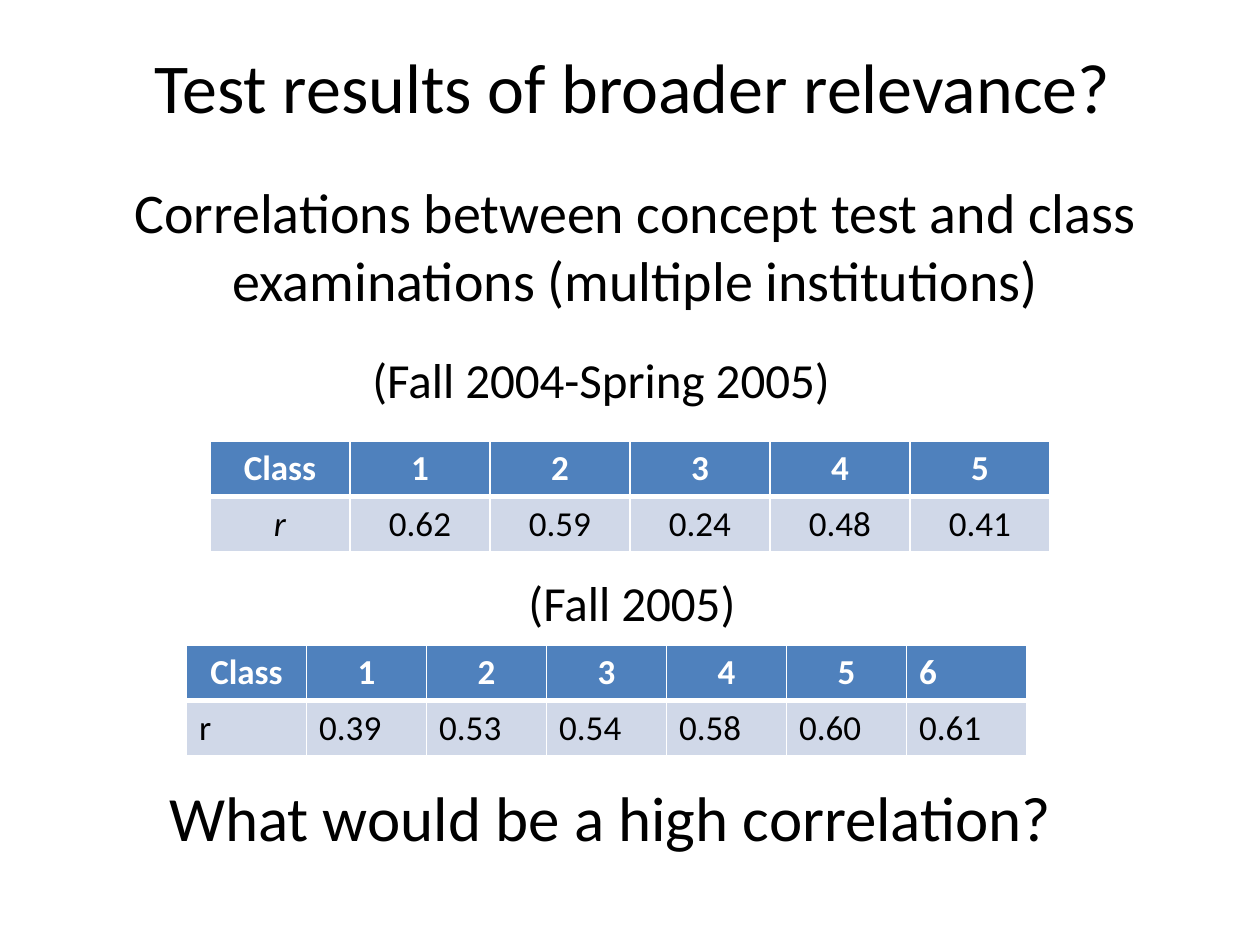
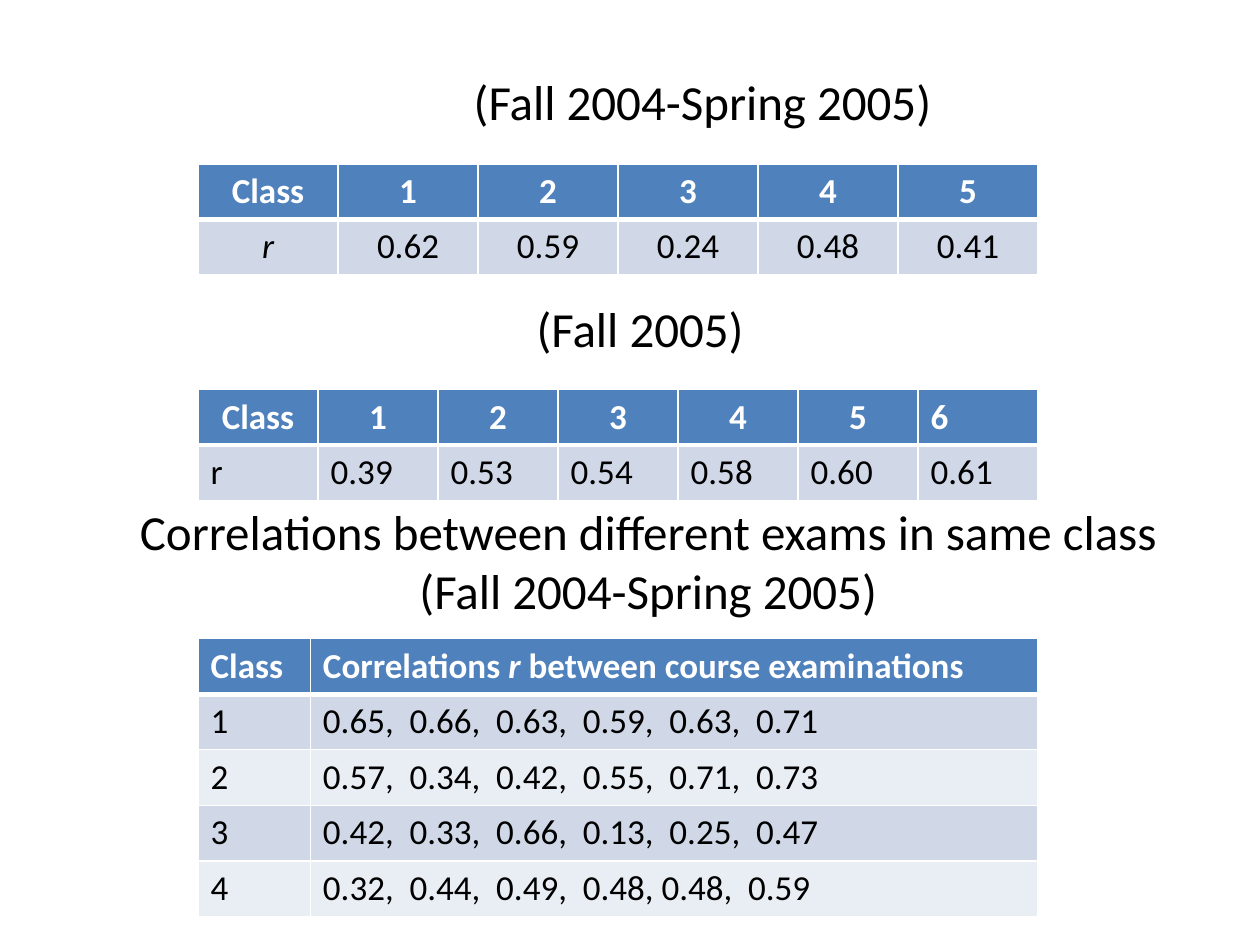
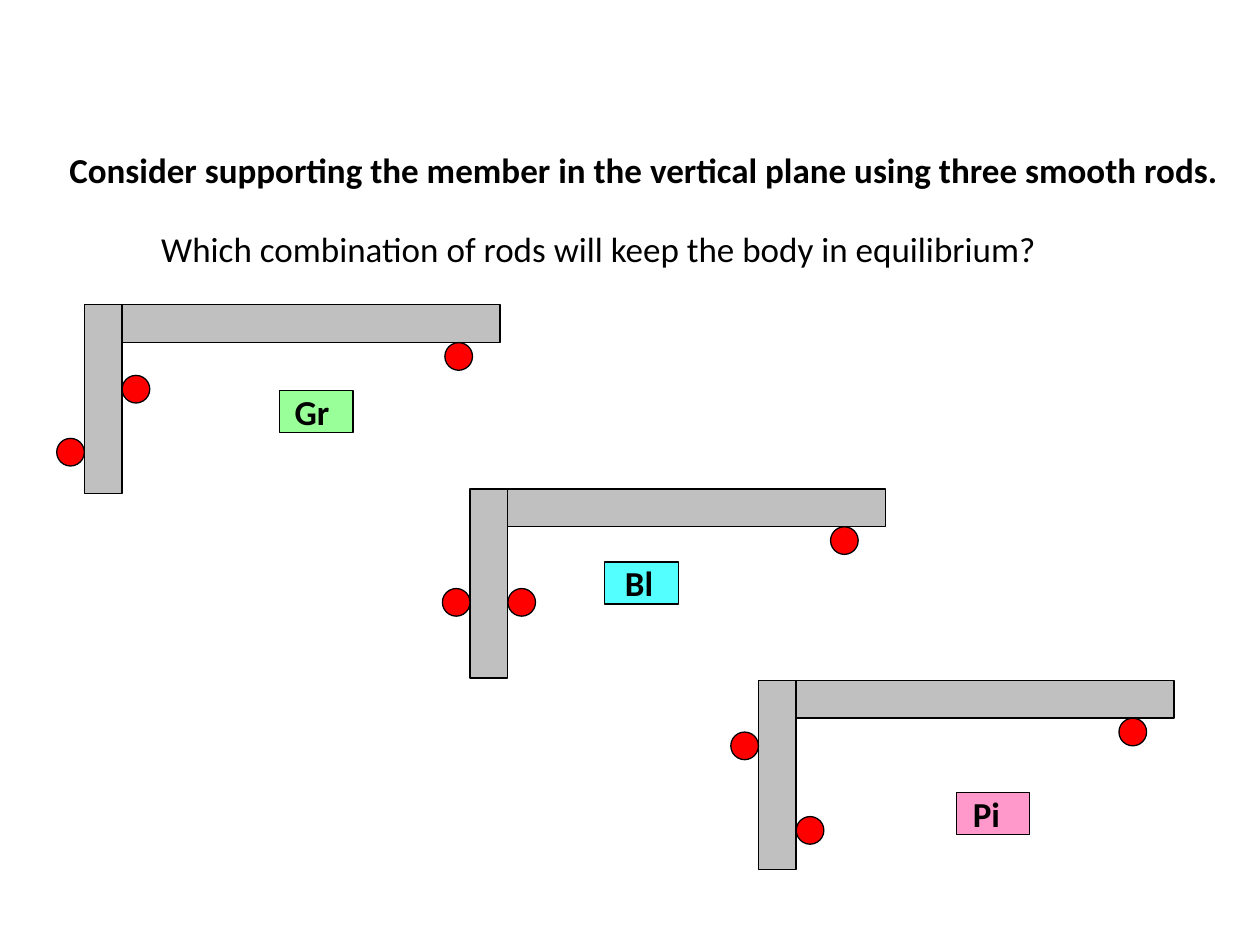
import pptx
import pptx.util
import pptx.dml.color
import pptx.enum.shapes
import pptx.enum.text
import pptx.oxml.ns
from lxml import etree

Pt = pptx.util.Pt
RGBColor = pptx.dml.color.RGBColor
SHAPES = pptx.enum.shapes.MSO_SHAPE
ANCHOR = pptx.enum.text.MSO_ANCHOR
ALIGN = pptx.enum.text.PP_ALIGN

BLACK = RGBColor(0x00, 0x00, 0x00)
WHITE = RGBColor(0xFF, 0xFF, 0xFF)
HEADER_BLUE = RGBColor(0x4F, 0x81, 0xBD)
BAND_DARK = RGBColor(0xD0, 0xD8, 0xE8)
BAND_LIGHT = RGBColor(0xE9, 0xED, 0xF4)
MEMBER_GREY = RGBColor(0xC0, 0xC0, 0xC0)
ROD_RED = RGBColor(0xFF, 0x00, 0x00)
LABEL_GREEN = RGBColor(0x99, 0xFF, 0x99)
LABEL_CYAN = RGBColor(0x53, 0xFF, 0xFF)
LABEL_PINK = RGBColor(0xFF, 0x99, 0xCC)

FONT = "Calibri"
TITLE_ONLY = 5
TABLE_WIDTH = 480
ROW_HEIGHT = 31.25
MEMBER_THICKNESS = 21.6
MEMBER_HEIGHT = 108
BEAM_LENGTH = 216
BEAM_ROD_OFFSET = 206
ROD_SIZE = 15.8

YEAR_ONE = "(Fall 2004-Spring 2005)"
YEAR_TWO = "(Fall 2005)"
YEAR_ONE_ROWS = [
    ["Class", "1", "2", "3", "4", "5"],
    ["*r*", "0.62", "0.59", "0.24", "0.48", "0.41"],
]
YEAR_TWO_ROWS = [
    ["Class", "1", "2", "3", "4", "5", "6"],
    ["r", "0.39", "0.53", "0.54", "0.58", "0.60", "0.61"],
]
EXAM_ROWS = [
    ["Class", "Correlations *r* between course examinations"],
    ["1", "0.65,  0.66,  0.63,  0.59,  0.63,  0.71"],
    ["2", "0.57,  0.34,  0.42,  0.55,  0.71,  0.73"],
    ["3", "0.42,  0.33,  0.66,  0.13,  0.25,  0.47"],
    ["4", "0.32,  0.44,  0.49,  0.48, 0.48,  0.59"],
]


def write(frame, text, size, align=ALIGN.LEFT, colour=BLACK, bold=False):
    para = frame.paragraphs[0]
    para.alignment = align
    for index, part in enumerate(text.split("*")):
        if part:
            span = para.add_run()
            span.text = part
            span.font.name = FONT
            span.font.size = Pt(size)
            span.font.bold = bold
            span.font.italic = index % 2 == 1
            span.font.color.rgb = colour


def fill_frame(box, text, size, align, anchor, bold):
    frame = box.text_frame
    frame.word_wrap = True
    frame.auto_size = pptx.enum.text.MSO_AUTO_SIZE.NONE
    frame.vertical_anchor = anchor
    write(frame, text, size, align, bold=bold)


def add_page(deck, title, bounds, size, align=ALIGN.CENTER, anchor=ANCHOR.MIDDLE, bold=False):
    page = deck.slides.add_slide(deck.slide_layouts[TITLE_ONLY])
    box = page.shapes.title
    box.left, box.top, box.width, box.height = map(Pt, bounds)
    fill_frame(box, title, size, align, anchor, bold)
    return page


def add_text(page, text, bounds, size, align=ALIGN.CENTER, anchor=ANCHOR.MIDDLE):
    box = page.shapes.add_textbox(*map(Pt, bounds))
    fill_frame(box, text, size, align, anchor, False)


def set_borders(cell, top, bottom):
    properties = cell._tc.get_or_add_tcPr()
    for side, width in (("lnL", 1), ("lnR", 1), ("lnT", top), ("lnB", bottom)):
        line = etree.SubElement(properties, pptx.oxml.ns.qn("a:" + side), w=str(Pt(width)))
        fill = etree.SubElement(line, pptx.oxml.ns.qn("a:solidFill"))
        etree.SubElement(fill, pptx.oxml.ns.qn("a:srgbClr"), val=str(WHITE))


def add_grid(page, rows, left, top, centred=None, first_width=None):
    column_count = len(rows[0])
    height = ROW_HEIGHT * len(rows)
    table = page.shapes.add_table(
        len(rows), column_count, Pt(left), Pt(top), Pt(TABLE_WIDTH), Pt(height)
    ).table
    if first_width:
        table.columns[0].width = Pt(first_width)
        table.columns[1].width = Pt(TABLE_WIDTH - first_width)
    centred = centred or [0] * len(rows)
    for row_index, row in enumerate(rows):
        header = row_index == 0
        band = BAND_DARK if row_index % 2 else BAND_LIGHT
        for column_index, text in enumerate(row):
            cell = table.cell(row_index, column_index)
            set_borders(cell, 3 if row_index == 1 else 1, 3 if header else 1)
            cell.fill.solid()
            cell.fill.fore_color.rgb = HEADER_BLUE if header else band
            align = ALIGN.CENTER if column_index < centred[row_index] else ALIGN.LEFT
            write(cell.text_frame, text, 20, align, WHITE if header else BLACK, header)


def add_solid(page, kind, bounds, colour):
    shape = page.shapes.add_shape(kind, *map(Pt, bounds))
    shape.shadow.inherit = False
    shape.fill.solid()
    shape.fill.fore_color.rgb = colour
    shape.line.color.rgb = BLACK
    shape.line.width = Pt(0.75)
    return shape


def add_supported_member(page, left, top, left_rod, right_rod):
    inner = left + MEMBER_THICKNESS
    add_solid(page, SHAPES.RECTANGLE, (left, top, MEMBER_THICKNESS, MEMBER_HEIGHT), MEMBER_GREY)
    add_solid(page, SHAPES.RECTANGLE, (inner, top, BEAM_LENGTH, MEMBER_THICKNESS), MEMBER_GREY)
    rods = (
        (left + BEAM_ROD_OFFSET, top + MEMBER_THICKNESS),
        (left - ROD_SIZE, top + left_rod),
        (inner, top + right_rod),
    )
    for rod_left, rod_top in rods:
        add_solid(page, SHAPES.OVAL, (rod_left, rod_top, ROD_SIZE, ROD_SIZE), ROD_RED)


def add_label(page, text, left, top, colour, inset):
    label = add_solid(page, SHAPES.RECTANGLE, (left, top, 42, 24), colour)
    frame = label.text_frame
    frame.margin_left = Pt(inset)
    frame.margin_right = frame.margin_top = frame.margin_bottom = Pt(0)
    fill_frame(label, text, 20, ALIGN.LEFT, ANCHOR.MIDDLE, True)


def build_relevance(deck):
    page = add_page(deck, "Test results of broader relevance?", (55.4, 12.2, 612, 73.4), 40)
    add_text(
        page,
        "Correlations between concept test and class examinations (multiple institutions)",
        (30.2, 98.6, 666, 82.8),
        32,
    )
    add_text(page, YEAR_ONE, (0, 181.4, 687, 70.6), 28)
    add_grid(page, YEAR_ONE_ROWS, 120, 252, (6, 6))
    add_text(page, YEAR_TWO, (35.3, 308.9, 651.6, 70.6), 28)
    add_grid(page, YEAR_TWO_ROWS, 106.6, 368.6, (6, 0))
    add_text(page, "What would be a high correlation?", (30.2, 431.3, 637.2, 70.6), 36)


def build_correlations(deck):
    page = add_page(deck, YEAR_ONE, (82.8, 22.3, 637.2, 70.6), 28)
    add_grid(page, YEAR_ONE_ROWS, 113.2, 93.6, (6, 6))
    add_text(page, YEAR_TWO, (68.4, 151.9, 594.7, 70.6), 28)
    add_grid(page, YEAR_TWO_ROWS, 113.2, 222.5, (6, 0))
    add_text(
        page,
        "Correlations between different exams in same class " + YEAR_ONE,
        (51.8, 285.1, 637.2, 70.6),
        28,
    )
    add_grid(page, EXAM_ROWS, 113.2, 365, first_width=64.2)


def build_rods(deck):
    page = add_page(
        deck,
        "Consider supporting the member in the vertical plane using three smooth rods.",
        (32.4, 81.4, 687.6, 52.6),
        20,
        ALIGN.LEFT,
        ANCHOR.TOP,
        True,
    )
    add_text(
        page,
        "Which combination of rods will keep the body in equilibrium?",
        (85, 126.7, 550, 31),
        20,
        ALIGN.LEFT,
        ANCHOR.TOP,
    )
    add_supported_member(page, 48.2, 174.2, 76.3, 40.3)
    add_label(page, "Gr", 159.8, 223.2, LABEL_GREEN, 8.6)
    add_supported_member(page, 268.6, 279.4, 56.9, 56.9)
    add_label(page, "Bl", 345.6, 321.1, LABEL_CYAN, 11.5)
    add_supported_member(page, 433.4, 388.8, 29.5, 77.8)
    add_label(page, "Pi", 546.5, 452.9, LABEL_PINK, 9.4)


def main():
    deck = pptx.Presentation()
    deck.slide_width = Pt(720)
    deck.slide_height = Pt(540)
    build_relevance(deck)
    build_correlations(deck)
    build_rods(deck)
    deck.save("out.pptx")


if __name__ == "__main__":
    main()
